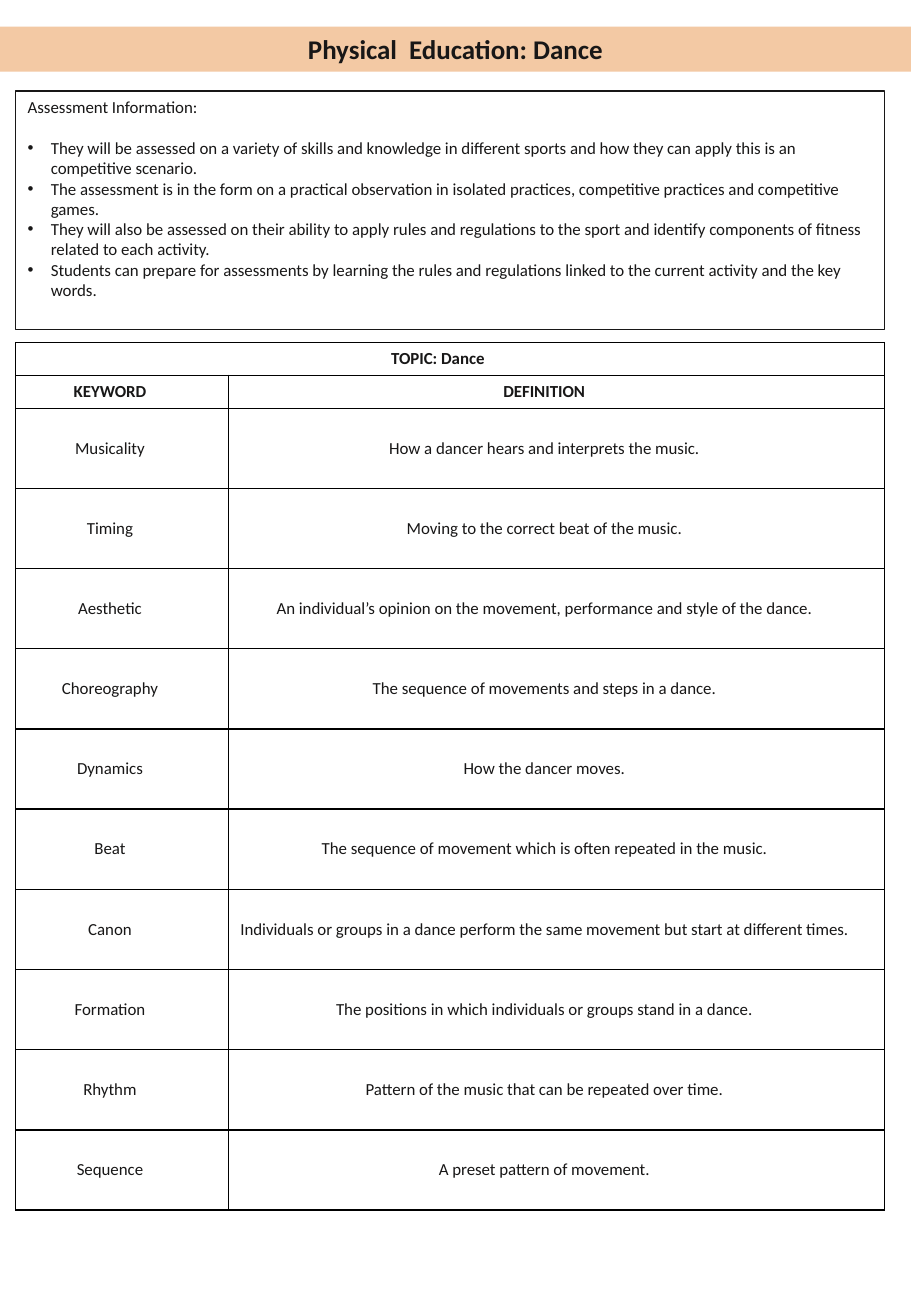
"""Build the dance knowledge page: title band, assessment box and keyword table."""
import pptx
import pptx.dml.color
import pptx.enum.shapes
import pptx.enum.text
import pptx.oxml
import pptx.oxml.ns
import pptx.util

Inches = pptx.util.Inches
Pt = pptx.util.Pt
Align = pptx.enum.text.PP_ALIGN
Anchor = pptx.enum.text.MSO_ANCHOR

COLOURS = {"band": "F3C9A4", "ink": "181717", "border": "000000", "paper": "FFFFFF"}
LEFT, WIDTH = 0.13, 7.15
HEADER_HEIGHT, KEYWORD_HEIGHT = 0.27, 0.66

ASSESSMENT_POINTS = [
    "They will be assessed on a variety of skills and knowledge in different sports and how they can apply this is an competitive scenario.",
    "The assessment is in the form on a practical observation in isolated practices, competitive practices and competitive games.",
    "They will also be assessed on their ability to apply rules and regulations to the sport and identify components of fitness related to each activity.",
    "Students can prepare for assessments by learning the rules and regulations linked to the current activity and the key words.",
]
TABLE_ROWS = [
    ("TOPIC: Dance", ""),
    ("KEYWORD", "DEFINITION"),
    ("Musicality", "How a dancer hears and interprets the music."),
    ("Timing", "Moving to the correct beat of the music."),
    ("Aesthetic", "An individual’s opinion on the movement, performance and style of the dance."),
    ("Choreography", "The sequence of movements and steps in a dance."),
    ("Dynamics", "How the dancer moves."),
    ("Beat", "The sequence of movement which is often repeated in the music."),
    ("Canon", "Individuals or groups in a dance perform the same movement but start at different times."),
    ("Formation", "The positions in which individuals or groups stand in a dance."),
    ("Rhythm", "Pattern of the music that can be repeated over time."),
    ("Sequence", "A preset pattern of movement."),
]


def colour(name):
    return pptx.dml.color.RGBColor.from_string(COLOURS[name])


def write(paragraph, text, size=10, bold=False, alignment=Align.LEFT):
    paragraph.alignment = alignment
    run = paragraph.add_run()
    run.text = text
    font_values = {"name": "Calibri", "size": Pt(size), "bold": bold}
    for attribute, value in font_values.items():
        setattr(run.font, attribute, value)
    run.font.color.rgb = colour("ink")


presentation = pptx.Presentation()
presentation.slide_width = Inches(7.5)
presentation.slide_height = Inches(10.83)
slide = presentation.slides.add_slide(presentation.slide_layouts[6])
rectangle = pptx.enum.shapes.MSO_SHAPE.RECTANGLE

title_band = slide.shapes.add_shape(rectangle, 0, Inches(0.22), Inches(7.5), Inches(0.37))
title_band.shadow.inherit = False
title_band.fill.solid()
title_band.fill.fore_color.rgb = colour("band")
title_band.line.fill.background()
title_band.text_frame.vertical_anchor = Anchor.MIDDLE
write(title_band.text_frame.paragraphs[0], "Physical  Education: Dance", 16, True, Align.CENTER)

table_height = 2 * HEADER_HEIGHT + 10 * KEYWORD_HEIGHT
table = slide.shapes.add_table(
    len(TABLE_ROWS), 2, Inches(LEFT), Inches(2.82), Inches(WIDTH), Inches(table_height)
).table
table.first_row = False
table.horz_banding = False
for column, width in zip(table.columns, (1.75, 5.4)):
    column.width = Inches(width)
table.cell(0, 0).merge(table.cell(0, 1))

cell_values = {
    "vertical_anchor": Anchor.MIDDLE,
    "margin_left": Inches(0.07),
    "margin_right": Inches(0.27),
    "margin_top": 0,
    "margin_bottom": 0,
}
for row_index, texts in enumerate(TABLE_ROWS):
    is_header = row_index < 2
    table.rows[row_index].height = Inches(HEADER_HEIGHT if is_header else KEYWORD_HEIGHT)
    for column_index, text in enumerate(texts):
        cell = table.cell(row_index, column_index)
        for attribute, value in cell_values.items():
            setattr(cell, attribute, value)
        properties = cell._tc.get_or_add_tcPr()
        for side in ("lnL", "lnR", "lnT", "lnB"):
            properties.append(pptx.oxml.parse_xml(
                f'<a:{side} {pptx.oxml.ns.nsdecls("a")} w="{Pt(1)}"><a:solidFill>'
                f'<a:srgbClr val="{COLOURS["border"]}"/></a:solidFill></a:{side}>'
            ))
        cell.fill.solid()
        cell.fill.fore_color.rgb = colour("paper")
        if text:
            paragraph = cell.text_frame.paragraphs[0]
            paragraph.space_after = Pt(6)
            write(paragraph, text, bold=is_header, alignment=Align.CENTER)

assessment_box = slide.shapes.add_shape(
    rectangle, Inches(LEFT), Inches(0.75), Inches(WIDTH), Inches(1.96)
)
assessment_box.shadow.inherit = False
assessment_box.fill.background()
assessment_box.line.color.rgb = colour("ink")
assessment_box.line.width = Pt(0.75)
text_frame = assessment_box.text_frame
text_frame.word_wrap = True
text_frame.vertical_anchor = Anchor.TOP
write(text_frame.paragraphs[0], "Assessment Information:")
for point_index, point in enumerate(ASSESSMENT_POINTS):
    paragraph = text_frame.add_paragraph()
    paragraph.space_before = Pt(0 if point_index else 12)
    properties = paragraph._p.get_or_add_pPr()
    properties.set("marL", str(Inches(0.19)))
    properties.set("indent", str(-Inches(0.19)))
    for bullet in ('buFont {} typeface="Arial"', 'buChar {} char="•"'):
        properties.append(pptx.oxml.parse_xml(f'<a:{bullet.format(pptx.oxml.ns.nsdecls("a"))}/>'))
    write(paragraph, point)

presentation.save("out.pptx")
